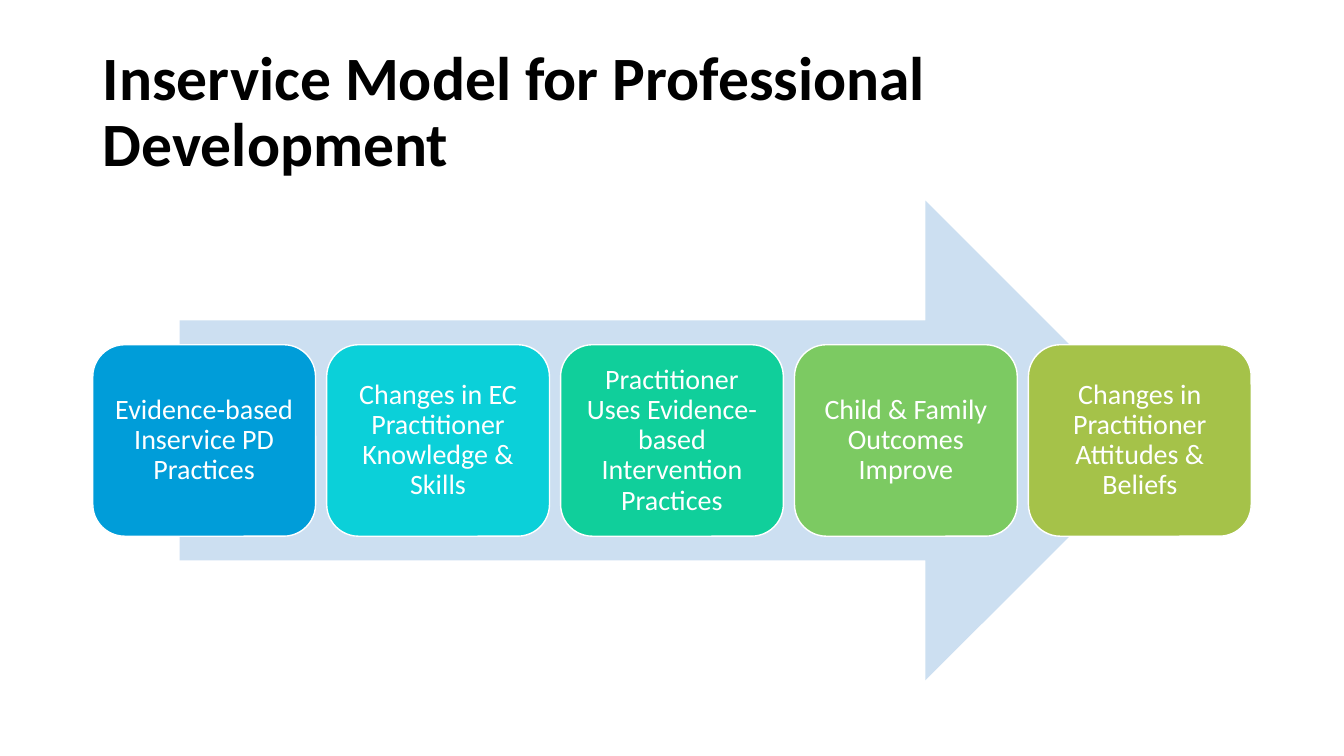
import pptx
import pptx.dml.color
import pptx.enum.shapes
import pptx.enum.text
import pptx.util

Inches = pptx.util.Inches
Pt = pptx.util.Pt
SHAPES = pptx.enum.shapes.MSO_SHAPE
ALIGN = pptx.enum.text.PP_ALIGN

COLOURS = {
    "title": "000000",
    "arrow": "CCDFF1",
    "white": "FFFFFF",
    "blue": "009DD9",
    "cyan": "0BD0D9",
    "teal": "10CF9B",
    "green": "7CCA62",
    "olive": "A5C249",
}

STEPS = [
    ("Evidence-based Inservice PD Practices", "blue"),
    ("Changes in EC Practitioner Knowledge & Skills", "cyan"),
    ("Practitioner Uses Evidence-based Intervention Practices", "teal"),
    ("Child & Family Outcomes Improve", "green"),
    ("Changes in Practitioner Attitudes & Beliefs", "olive"),
]


class ProcessSlide:
    """Style and grid of the slide: one column per step, lengths in inches."""

    font = "Calibri"
    left, width = 0.92, 11.5
    gap, column = 0.11, 2.21
    row_top, row_height = 3.42, 1.9
    middle = row_top + row_height / 2

    def __init__(self, presentation):
        layout = presentation.slide_layouts.get_by_name("Title Only")
        self.slide = presentation.slides.add_slide(layout)

    def colour(self, name):
        return pptx.dml.color.RGBColor.from_string(COLOURS[name])

    def set_text(self, shape, text, size, colour, alignment, bold=False):
        frame = shape.text_frame
        frame.text = text
        frame.word_wrap = True
        frame.auto_size = pptx.enum.text.MSO_AUTO_SIZE.NONE
        frame.vertical_anchor = pptx.enum.text.MSO_ANCHOR.MIDDLE
        paragraph = frame.paragraphs[0]
        paragraph.alignment = alignment
        paragraph.line_spacing = 0.9
        font = paragraph.runs[0].font
        font.name, font.size, font.bold = self.font, Pt(size), bold
        font.color.rgb = self.colour(colour)

    def title(self, text, top, height):
        shape = self.slide.shapes.title
        shape.left, shape.top = Inches(self.left), Inches(top)
        shape.width, shape.height = Inches(self.width), Inches(height)
        self.set_text(shape, text, 44, "title", ALIGN.LEFT, bold=True)

    def block(self, kind, left, top, width, height, fill):
        shape = self.slide.shapes.add_shape(
            kind, Inches(left), Inches(top), Inches(width), Inches(height))
        shape.shadow.inherit = False
        shape.fill.solid()
        shape.fill.fore_color.rgb = self.colour(fill)
        shape.line.fill.background()
        return shape

    def arrow(self, share, height):
        """Arrow centred on the grid, taking a share of its width."""
        width = self.width * share
        self.block(SHAPES.RIGHT_ARROW, self.left + (self.width - width) / 2,
                   self.middle - height / 2, width, height, "arrow")

    def step(self, index, text, fill):
        left = self.left + index * (self.column + self.gap)
        shape = self.block(SHAPES.ROUNDED_RECTANGLE, left, self.row_top,
                           self.column, self.row_height, fill)
        shape.line.color.rgb = self.colour("white")
        shape.line.width = Pt(1)
        frame = shape.text_frame
        frame.margin_left = frame.margin_right = Inches(0.08)
        frame.margin_top = frame.margin_bottom = Inches(0.08)
        self.set_text(shape, text, 20, "white", ALIGN.CENTER)


def main():
    presentation = pptx.Presentation()
    presentation.slide_width = Inches(13.33)
    presentation.slide_height = Inches(7.5)
    page = ProcessSlide(presentation)

    # Heading
    page.title("Inservice Model for Professional Development", 0.4, 1.45)

    # Background arrow, then the steps in front of it
    page.arrow(share=0.85, height=4.76)
    for index, (text, fill) in enumerate(STEPS):
        page.step(index, text, fill)

    presentation.save("out.pptx")


if __name__ == "__main__":
    main()
